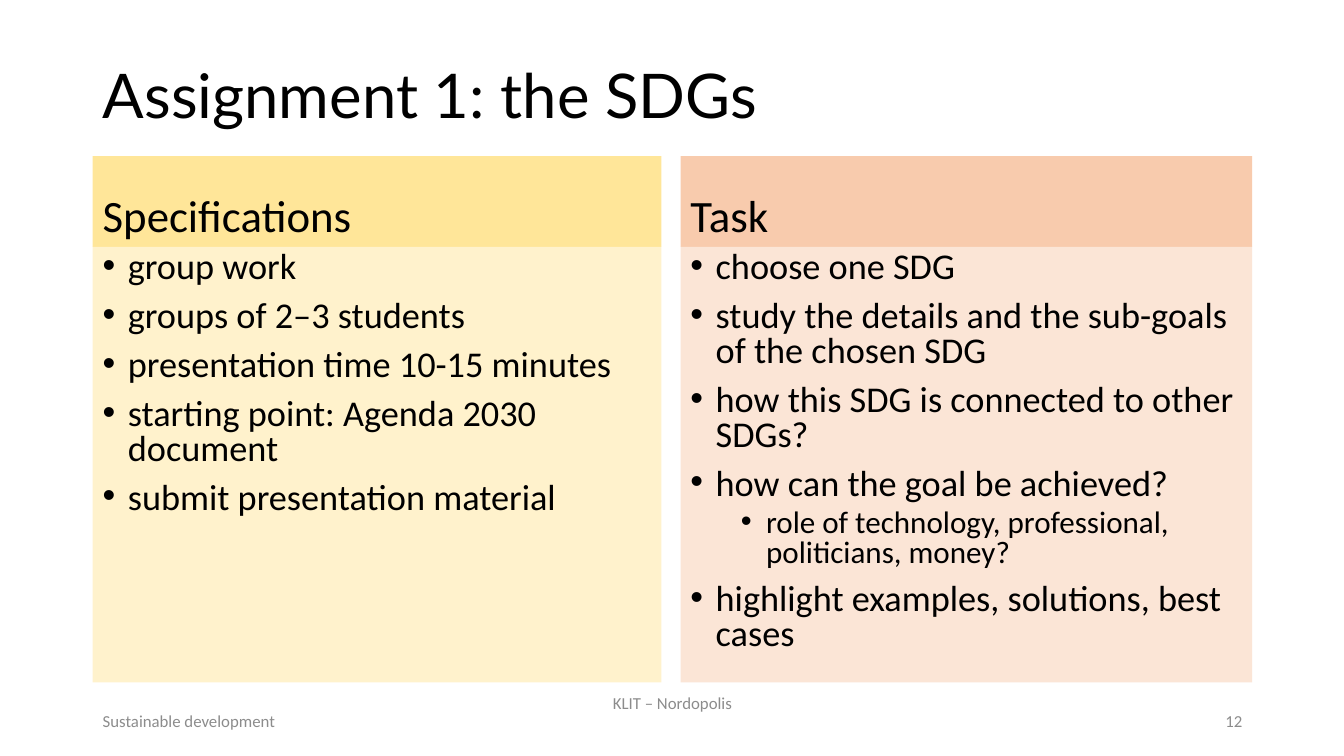
from dataclasses import dataclass

from lxml import etree
from pptx import Presentation
from pptx.dml.color import RGBColor
from pptx.enum.shapes import MSO_SHAPE
from pptx.enum.text import MSO_ANCHOR, PP_ALIGN
from pptx.oxml.ns import qn
from pptx.util import Inches, Pt

RECTANGLE = MSO_SHAPE.RECTANGLE
TOP, MIDDLE, BOTTOM = MSO_ANCHOR.TOP, MSO_ANCHOR.MIDDLE, MSO_ANCHOR.BOTTOM
LEFT, CENTER, RIGHT = PP_ALIGN.LEFT, PP_ALIGN.CENTER, PP_ALIGN.RIGHT


@dataclass(frozen=True)
class Theme:
    """Colours, fonts and type sizes of the slide."""
    title_font: str = "Lato"
    body_font: str = "Calibri"
    ink: str = "000000"
    muted: str = "8C8C8C"
    yellow: str = "FFE699"
    pale_yellow: str = "FFF2CC"
    orange: str = "F8CBAD"
    pale_orange: str = "FBE5D6"
    title_size: float = 44
    heading_size: float = 32
    item_sizes: tuple = (25.9, 22.2)
    footer_size: float = 12


THEME = Theme()
HEADING_HEIGHT = 0.9
SPECIFICATIONS = [
    ("group work", 0),
    ("groups of 2–3 students", 0),
    ("presentation time 10-15 minutes", 0),
    ("starting point: Agenda 2030 document", 0),
    ("submit presentation material", 0),
]
TASK = [
    ("choose one SDG", 0),
    ("study the details and the sub-goals of the chosen SDG", 0),
    ("how this SDG is connected to other SDGs?", 0),
    ("how can the goal be achieved?", 0),
    ("role of technology, professional, politicians, money?", 1),
    ("highlight examples, solutions, best cases", 0),
]


def style(paragraph, text, size, color=THEME.ink, font=THEME.body_font, align=LEFT):
    """Write one paragraph with its font and alignment."""
    paragraph.text = text
    paragraph.alignment = align
    paragraph.font.size = Pt(size)
    paragraph.font.name = font
    paragraph.font.color.rgb = RGBColor.from_string(color)


def add_bullet(paragraph, level):
    """Give a paragraph a hanging bullet at its level."""
    paragraph.level = level
    properties = paragraph._p.get_or_add_pPr()
    properties.set("marL", str(Inches(0.25 + 0.5 * level)))
    properties.set("indent", str(Inches(-0.25)))
    etree.SubElement(properties, qn("a:buFont")).set("typeface", "Arial")
    etree.SubElement(properties, qn("a:buChar")).set("char", "•")


def add_label(slide, box, text, size, **look):
    """Place a single vertically centred line of text."""
    frame = slide.shapes.add_textbox(*map(Inches, box)).text_frame
    frame.word_wrap = True
    frame.vertical_anchor = MIDDLE
    style(frame.paragraphs[0], text, size, **look)
    return frame.paragraphs[0]


def add_block(slide, box, fill, anchor):
    """Place a plain filled rectangle and return its text frame."""
    block = slide.shapes.add_shape(RECTANGLE, *map(Inches, box))
    block.shadow.inherit = False
    block.fill.solid()
    block.fill.fore_color.rgb = RGBColor.from_string(fill)
    block.line.fill.background()
    block.text_frame.word_wrap = True
    block.text_frame.vertical_anchor = anchor
    return block.text_frame


def add_column(slide, box, heading, items, heading_fill, body_fill):
    """Stack a heading band on a bulleted list."""
    left, top, width, height = box
    band = add_block(slide, (left, top, width, HEADING_HEIGHT), heading_fill, BOTTOM)
    style(band.paragraphs[0], heading, THEME.heading_size)
    band.paragraphs[0].line_spacing = 0.9
    band.paragraphs[0].space_before = Pt(10)

    body_box = (left, top + HEADING_HEIGHT, width, height - HEADING_HEIGHT)
    body = add_block(slide, body_box, body_fill, TOP)
    for index, (text, level) in enumerate(items):
        item = body.add_paragraph() if index else body.paragraphs[0]
        style(item, text, THEME.item_sizes[level])
        item.line_spacing = 0.8
        item.space_before = Pt(5 if level else 10)
        add_bullet(item, level)


def add_footer(slide, box):
    """Place the course name, the organiser and the page number."""
    left, top, width, height = box
    entries = [
        ("Sustainable development", left, top, 3, LEFT),
        ("KLIT – Nordopolis", left + 3.5, top - 0.18, 4.5, CENTER),
        ("12", left + width - 3, top, 3, RIGHT),
    ]
    for text, x, y, entry_width, align in entries:
        add_label(slide, (x, y, entry_width, height), text, THEME.footer_size,
                  color=THEME.muted, align=align)


def build_assignment_slide(presentation):
    """Build the assignment slide with its two columns."""
    slide = presentation.slides.add_slide(presentation.slide_layouts[6])
    title = add_label(slide, (0.92, 0.4, 11.5, 1.15), "Assignment 1: the SDGs",
                      THEME.title_size, font=THEME.title_font)
    title.line_spacing = 0.9
    add_column(slide, (0.92, 1.55, 5.64, 5.22), "Specifications", SPECIFICATIONS,
               THEME.yellow, THEME.pale_yellow)
    add_column(slide, (6.75, 1.55, 5.67, 5.22), "Task", TASK,
               THEME.orange, THEME.pale_orange)
    add_footer(slide, (0.92, 6.95, 11.5, 0.4))


def main():
    """Create and save the presentation."""
    presentation = Presentation()
    presentation.slide_width = Inches(13.33)
    presentation.slide_height = Inches(7.5)
    build_assignment_slide(presentation)
    presentation.save("out.pptx")


if __name__ == "__main__":
    main()
